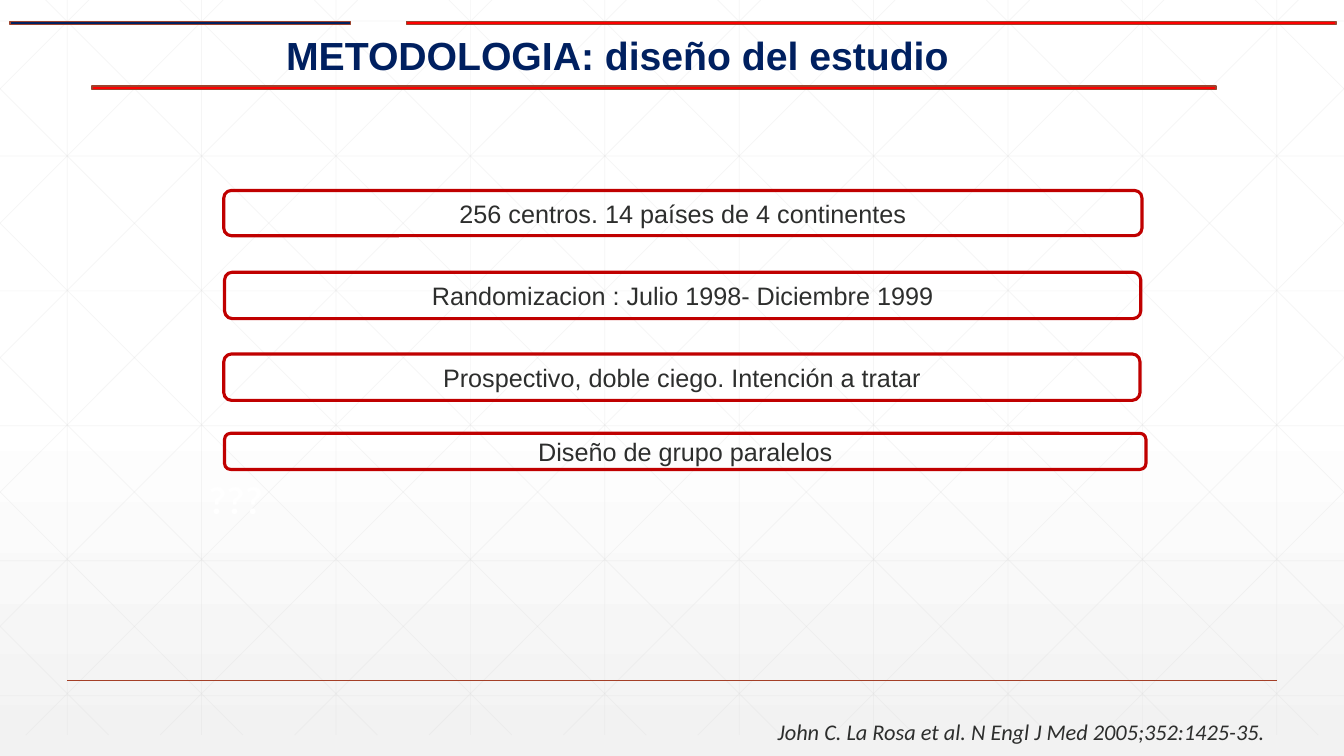
from dataclasses import dataclass

from lxml.etree import SubElement
from pptx import Presentation
from pptx.dml.color import RGBColor
from pptx.enum.shapes import MSO_CONNECTOR, MSO_SHAPE
from pptx.enum.text import MSO_ANCHOR, PP_ALIGN
from pptx.oxml.ns import qn
from pptx.util import Cm, Pt


@dataclass(frozen=True)
class Theme:
    white: str = "FFFFFF"
    shade: str = "F2F2F2"
    grid: str = "D9D9D9"
    navy: str = "002060"
    red: str = "FF0000"
    frame: str = "C00000"
    bar_edge: str = "9B432E"
    rule: str = "A43F27"
    ink: str = "2D2E2D"
    heading: str = "Arial"
    body: str = "Calibri"
    title_size: int = 28
    item_size: int = 18
    source_size: int = 16


@dataclass(frozen=True)
class Box:
    """A region of the slide, in centimetres."""
    left: float
    top: float
    width: float
    height: float

    def lengths(self):
        return [Cm(value) for value in (self.left, self.top, self.width, self.height)]


THEME = Theme()
PAGE = Box(0, 0, 33.87, 19.05)
MINUS_SPAN = 0.7349  # visible share of a minus shape's width

# Left, top, width and height of each study feature
FEATURES = [
    ("256 centros. 14 países de 4 continentes", Box(5.64, 4.8, 23.14, 1.14)),
    ("Randomizacion : Julio 1998- Diciembre 1999", Box(5.66, 6.86, 23.09, 1.17)),
    ("Prospectivo, doble ciego. Intención a tratar", Box(5.64, 8.92, 23.09, 1.17)),
    ("Diseño de grupo paralelos", Box(5.66, 10.92, 23.22, 0.91)),
]


def color(value):
    return RGBColor.from_string(value)


def write(shape, text, alignment=PP_ALIGN.LEFT, wrap=True, anchor=MSO_ANCHOR.TOP,
          font_color=THEME.ink, size=THEME.item_size, **font_format):
    frame = shape.text_frame
    frame.word_wrap = wrap
    frame.vertical_anchor = anchor
    paragraph = frame.paragraphs[0]
    paragraph.alignment = alignment
    run = paragraph.add_run()
    run.text = text
    run.font.color.rgb = color(font_color)
    run.font.size = Pt(size)
    for name, value in font_format.items():
        setattr(run.font, name, value)


def add_text(slide, box, text, **text_format):
    write(slide.shapes.add_textbox(*box.lengths()), text, **text_format)


def add_line(slide, start, end, line_color, width, opacity=None):
    points = [Cm(value) for value in (*start, *end)]
    connector = slide.shapes.add_connector(MSO_CONNECTOR.STRAIGHT, *points)
    connector.line.color.rgb = color(line_color)
    connector.line.width = Pt(width)
    properties = connector._element.spPr
    SubElement(properties, qn("a:effectLst"))
    if opacity is not None:
        tint = next(properties.iter(qn("a:srgbClr")))
        SubElement(tint, qn("a:alpha")).set("val", str(opacity * 1000))


def add_bar(slide, box, fill_color):
    """Draw a minus shape whose visible bar spans the width of the box."""
    width = box.width / MINUS_SPAN
    outer = Box(box.left - (width - box.width) / 2, box.top, width, box.height)
    shape = slide.shapes.add_shape(MSO_SHAPE.MATH_MINUS, *outer.lengths())
    shape.shadow.inherit = False
    shape.fill.solid()
    shape.fill.fore_color.rgb = color(fill_color)
    shape.line.color.rgb = color(THEME.bar_edge)
    shape.line.width = Pt(1)


def add_background(slide):
    fill = slide.background.fill
    fill.gradient()
    fill.gradient_angle = 270
    stops = ((0.53, THEME.white), (1, THEME.shade))
    for stop, (position, value) in zip(fill.gradient_stops, stops):
        stop.position = position
        stop.color.rgb = color(value)


def add_grid(slide, box):
    right, bottom = box.left + box.width, box.top + box.height
    pitch, row_pitch = box.width / 10, 3.4
    lines = []
    # Columns and rows
    for column in range(10):
        x = box.left + pitch * (column + 0.5)
        lines.append(((x, box.top), (x, bottom)))
    for row in range(6):
        y = box.top + 0.53 + row_pitch * row
        lines.append(((box.left, y), (right, y)))
    # Diagonals cut at the sides, each with its mirror image
    for step in range(-5, 10):
        x = box.left + 1.15 + pitch * step
        skip = max(0, box.left - x)
        reach = min(box.height, right - x)
        start = (x + skip, box.top + skip)
        end = (x + reach, box.top + reach)
        lines.append((start, end))
        lines.append(tuple((box.left + right - px, py) for px, py in (start, end)))
    for start, end in lines:
        add_line(slide, start, end, THEME.grid, 0.5, opacity=25)


def add_header(slide, box):
    add_text(slide, Box(box.left + 6.44, box.top + 0.66, 18.24, 1.45),
             "METODOLOGIA: diseño del estudio", alignment=PP_ALIGN.CENTER,
             font_color=THEME.navy, size=THEME.title_size,
             name=THEME.heading, bold=True)
    # Two bars above the title and one below it
    bars = [
        (0.25, 0.43, 8.59, 0.3, THEME.navy),
        (10.24, 0.43, 23.43, 0.3, THEME.red),
        (2.32, 2.01, 28.33, 0.41, THEME.red),
    ]
    for left, top, width, height, fill_color in bars:
        add_bar(slide, Box(box.left + left, box.top + top, width, height), fill_color)


def add_feature(slide, box, text):
    shape = slide.shapes.add_shape(MSO_SHAPE.ROUNDED_RECTANGLE, *box.lengths())
    shape.shadow.inherit = False
    shape.fill.background()
    shape.line.color.rgb = color(THEME.frame)
    shape.line.width = Pt(2.25)
    write(shape, text, alignment=PP_ALIGN.CENTER, anchor=MSO_ANCHOR.MIDDLE,
          name=THEME.heading)


def add_footer(slide, box):
    add_line(slide, (box.left + 1.69, box.top), (box.left + box.width - 1.69, box.top),
             THEME.rule, 1)
    add_text(slide, Box(box.left + 19.35, box.top + 0.81, 12.95, 0.94),
             "John C. La Rosa et al. N Engl J Med 2005;352:1425-35.",
             wrap=False, size=THEME.source_size, name=THEME.body, italic=True)


def main():
    presentation = Presentation()
    presentation.slide_width = Cm(PAGE.width)
    presentation.slide_height = Cm(PAGE.height)
    slide = presentation.slides.add_slide(presentation.slide_layouts[6])
    add_background(slide)
    add_grid(slide, Box(0, 0, PAGE.width, 18.52))
    add_header(slide, Box(0, 0, PAGE.width, 2.5))
    # Pale question marks below the features
    add_text(slide, Box(5, 11.84, 1.98, 1.45), "???", font_color=THEME.white,
             size=THEME.title_size, name=THEME.body, bold=True)
    for text, box in FEATURES:
        add_feature(slide, box, text)
    add_footer(slide, Box(0, 17.15, PAGE.width, 1.9))
    presentation.save("out.pptx")


if __name__ == "__main__":
    main()
